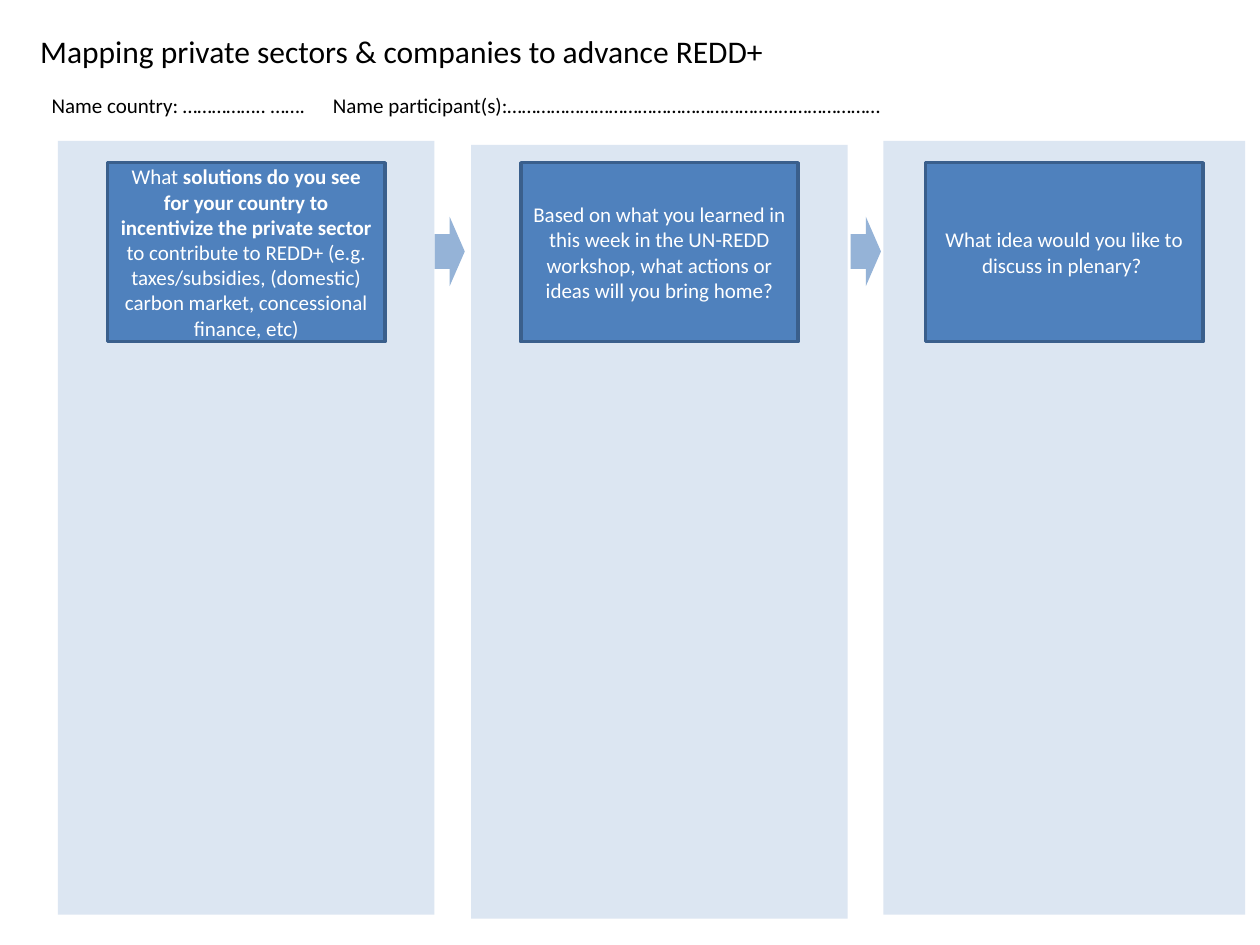
from dataclasses import dataclass

from lxml.etree import SubElement
from pptx import Presentation
from pptx.dml.color import RGBColor
from pptx.enum.shapes import MSO_SHAPE
from pptx.enum.text import MSO_ANCHOR, MSO_AUTO_SIZE, PP_ALIGN
from pptx.oxml.ns import qn
from pptx.util import Cm, Pt


@dataclass(frozen=True)
class Theme:
    font: str = "Calibri"
    title: int = 18
    body: int = 12
    border: int = 2
    ink: str = "000000"
    white: str = "FFFFFF"
    panel: str = "DCE6F2"
    box: str = "4F81BD"
    box_line: str = "3A5F8C"
    arrow: str = "95B3D7"


theme = Theme()


def add_block(kind, left, top, width, height, fill):
    s = slide.shapes.add_shape(kind, Cm(left), Cm(top), Cm(width), Cm(height))
    s.shadow.inherit = False
    s.fill.solid()
    s.fill.fore_color.rgb = RGBColor.from_string(fill)
    s.line.fill.background()
    return s


def style_run(r, size, color, bold=False):
    r.font.name = theme.font
    r.font.size = Pt(size)
    r.font.bold = bold
    r.font.color.rgb = RGBColor.from_string(color)


prs = Presentation()
prs.slide_width, prs.slide_height = Cm(25.4), Cm(19.05)
slide = prs.slides.add_slide(prs.slide_layouts[6])

headings = [
    ("Mapping private sectors & companies to advance REDD+",
     0.56, 0.53, 15.27, 1.02, theme.title, False),
    ("Name country: …………….. …….\tName participant(s):………………………………………………..…………………",
     0.79, 1.75, 23.9, 0.76, theme.body, True),
]
for text, left, top, width, height, size, wrap in headings:
    s = slide.shapes.add_textbox(Cm(left), Cm(top), Cm(width), Cm(height))
    tf = s.text_frame
    tf.word_wrap = wrap
    tf.auto_size = MSO_AUTO_SIZE.SHAPE_TO_FIT_TEXT
    tf.text = text
    p = tf.paragraphs[0]
    if "\t" in text:
        tabs = SubElement(p._p.get_or_add_pPr(), qn("a:tabLst"))
        SubElement(tabs, qn("a:tab"), pos=str(Cm(5.67)), algn="l")
    for r in p.runs:
        style_run(r, size, theme.ink)

panel_height = 15.6
box_width, box_height, box_top = 5.59, 3.61, 3.28
columns = [
    (1.17, 2.84, 7.59, [
        ("What ", False),
        ("solutions do you see for your country to incentivize the private sector ", True),
        ("to contribute to REDD+ (e.g. taxes/subsidies, (domestic) carbon market, "
         "concessional finance, etc)", False),
    ]),
    (9.5, 2.92, 7.59, [
        ("Based on what you learned in this week in the UN-REDD workshop, "
         "what actions or ideas will you bring home?", False),
    ]),
    (17.81, 2.84, 7.29, [
        ("What idea would you like to discuss in plenary? ", False),
    ]),
]
for left, top, width, question in columns:
    add_block(MSO_SHAPE.RECTANGLE, left, top, width, panel_height, theme.panel)
    box_left = left + (width - box_width) / 2
    s = add_block(MSO_SHAPE.RECTANGLE, box_left, box_top, box_width, box_height, theme.box)
    s.line.color.rgb = RGBColor.from_string(theme.box_line)
    s.line.width = Pt(theme.border)
    tf = s.text_frame
    tf.word_wrap = True
    tf.vertical_anchor = MSO_ANCHOR.MIDDLE
    p = tf.paragraphs[0]
    p.alignment = PP_ALIGN.CENTER
    for text, bold in question:
        r = p.add_run()
        r.text = text
        style_run(r, theme.body, theme.white, bold)

for left in (8.76, 17.15):
    add_block(MSO_SHAPE.RIGHT_ARROW, left, 4.37, 0.61, 1.4, theme.arrow)

prs.save("out.pptx")
